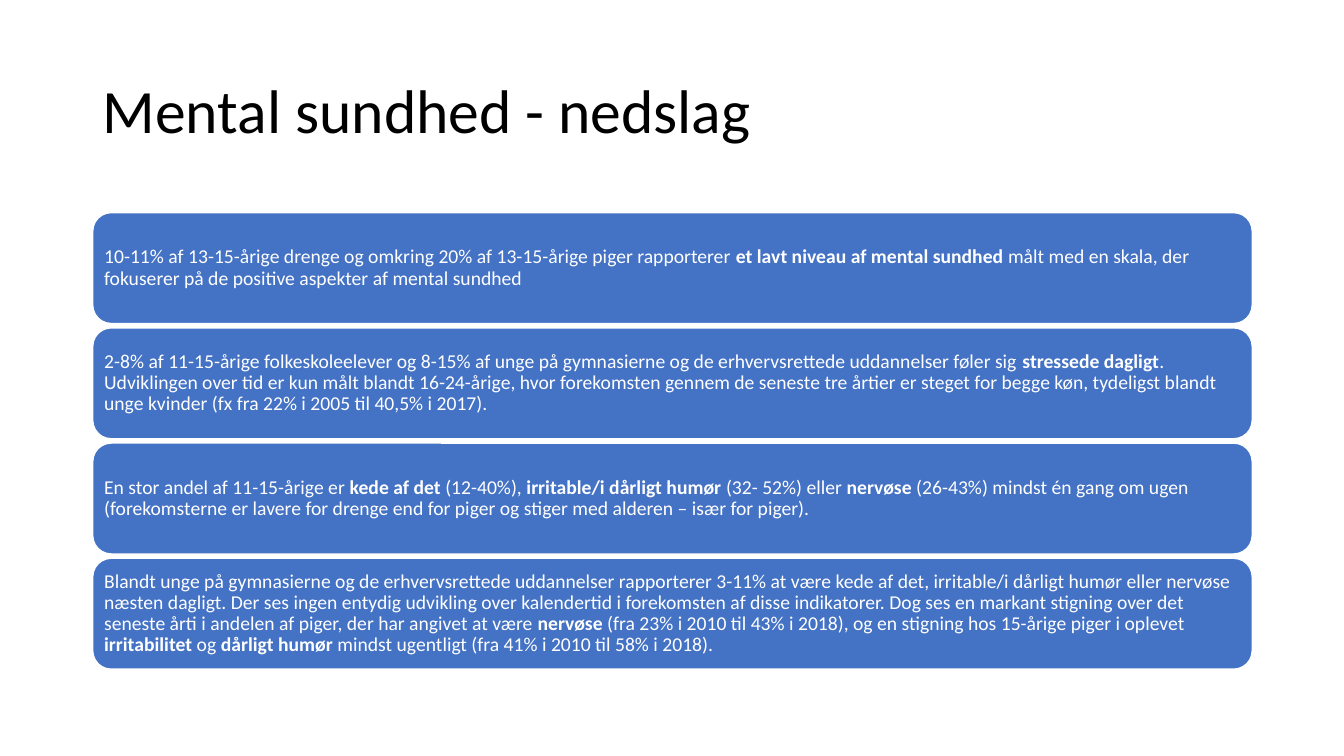
from pptx import Presentation
from pptx.dml.color import RGBColor
from pptx.enum.shapes import MSO_SHAPE
from pptx.enum.text import MSO_ANCHOR, PP_ALIGN
from pptx.util import Inches, Pt

BLACK = RGBColor(0x00, 0x00, 0x00)
WHITE = RGBColor(0xFF, 0xFF, 0xFF)
BLUE = RGBColor(0x44, 0x72, 0xC4)
FONT = "Calibri"

LEFT, WIDTH = 0.92, 11.5
FIRST_TOP, CARD_HEIGHT, CARD_STEP = 2.11, 1.1, 1.143

FINDINGS = [
    [
        ("10-11% af 13-15-årige drenge og omkring 20% af 13-15-årige piger rapporterer ", False),
        ("et lavt niveau af mental sundhed ", True),
        ("målt med en skala, der fokuserer på de positive aspekter af mental sundhed", False),
    ],
    [
        ("2-8% af 11-15-årige folkeskoleelever og 8-15% af unge på gymnasierne og de "
         "erhvervsrettede uddannelser føler sig ", False),
        ("stressede dagligt", True),
        (". Udviklingen over tid er kun målt blandt 16-24-årige, hvor forekomsten gennem "
         "de seneste tre årtier er steget for begge køn, tydeligst blandt unge kvinder "
         "(fx fra 22% i 2005 til 40,5% i 2017).", False),
    ],
    [
        ("En stor andel af 11-15-årige er ", False),
        ("kede af det ", True),
        ("(12-40%), ", False),
        ("irritable/i dårligt humør ", True),
        ("(32- 52%) eller ", False),
        ("nervøse", True),
        (" (26-43%) mindst én gang om ugen (forekomsterne er lavere for drenge end for "
         "piger og stiger med alderen – især for piger).", False),
    ],
    [
        ("Blandt unge på gymnasierne og de erhvervsrettede uddannelser rapporterer 3-11% "
         "at være kede af det, irritable/i dårligt humør eller nervøse næsten dagligt. "
         "Der ses ingen entydig udvikling over kalendertid i forekomsten af disse "
         "indikatorer. Dog ses en markant stigning over det seneste årti i andelen af "
         "piger, der har angivet at være ", False),
        ("nervøse", True),
        (" (fra 23% i 2010 til 43% i 2018), og en stigning hos 15-årige piger i oplevet ", False),
        ("irritabilitet", True),
        (" og ", False),
        ("dårligt humør ", True),
        ("mindst ugentligt (fra 41% i 2010 til 58% i 2018).", False),
    ],
]


def write_runs(tf, runs, size, color):
    tf.word_wrap = True
    tf.vertical_anchor = MSO_ANCHOR.MIDDLE
    p = tf.paragraphs[0]
    p.alignment = PP_ALIGN.LEFT
    p.line_spacing = 0.9
    for text, bold in runs:
        r = p.add_run()
        r.text = text
        r.font.name = FONT
        r.font.size = Pt(size)
        r.font.bold = bold
        r.font.color.rgb = color


def add_title(s, text):
    box = s.shapes.add_textbox(Inches(LEFT), Inches(0.4), Inches(WIDTH), Inches(1.45))
    write_runs(box.text_frame, [(text, False)], 44, BLACK)


def add_card(s, top, runs):
    card = s.shapes.add_shape(MSO_SHAPE.ROUNDED_RECTANGLE, Inches(LEFT), Inches(top),
                              Inches(WIDTH), Inches(CARD_HEIGHT))
    card.shadow.inherit = False
    card.fill.solid()
    card.fill.fore_color.rgb = BLUE
    card.line.color.rgb = WHITE
    card.line.width = Pt(1)
    tf = card.text_frame
    tf.margin_left = tf.margin_right = tf.margin_top = tf.margin_bottom = Inches(0.06)
    write_runs(tf, runs, 14, WHITE)


def main():
    prs = Presentation()
    prs.slide_width = Inches(13.33)
    prs.slide_height = Inches(7.5)
    s = prs.slides.add_slide(prs.slide_layouts[6])
    add_title(s, "Mental sundhed - nedslag")
    for i, runs in enumerate(FINDINGS):
        add_card(s, FIRST_TOP + i * CARD_STEP, runs)
    prs.save("out.pptx")


if __name__ == "__main__":
    main()
